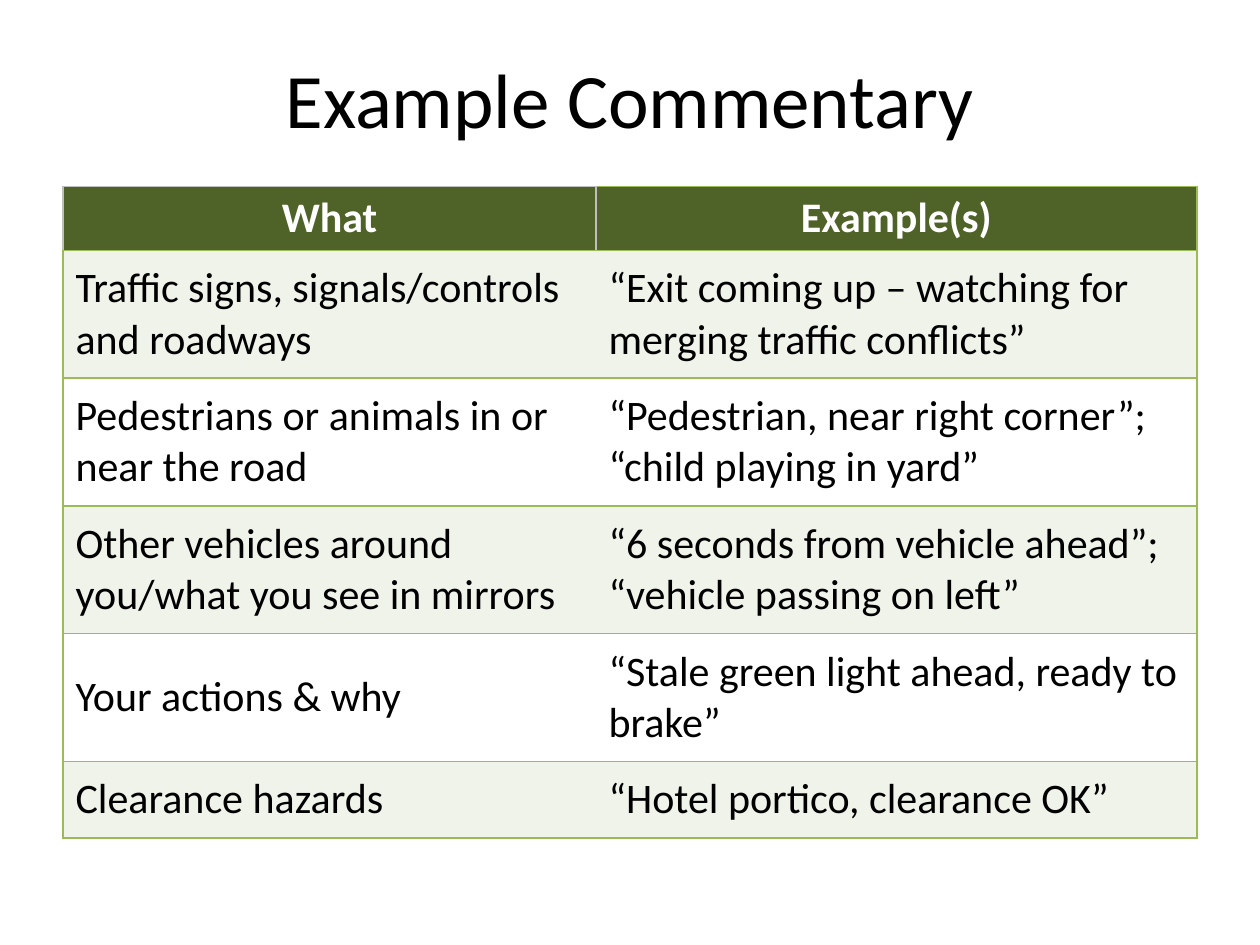
from pptx import Presentation
from pptx.dml.color import RGBColor
from pptx.enum.text import MSO_ANCHOR as Anchor, PP_ALIGN as Align
from pptx.oxml.ns import qn
from pptx.util import Inches, Pt
from lxml.etree import SubElement

GREEN, GREY, DARK = "9BBB59", "BFBFBF", "4F6228"
BANDS = ["EFF3EA", "FFFFFF"]
HEADER = ["What", "Example(s)"]
ROWS = [
    ("Traffic signs, signals/controls and roadways",
     "“Exit coming up – watching for merging traffic conflicts”"),
    ("Pedestrians or animals in or near the road",
     "“Pedestrian, near right corner”;\n“child playing in yard”"),
    ("Other vehicles around you/what you see in mirrors",
     "“6 seconds from vehicle ahead”;\n“vehicle passing on left”"),
    ("Your actions & why", "“Stale green light ahead, ready to brake”"),
    ("Clearance hazards", "“Hotel portico, clearance OK”"),
]
COL_WIDTHS = [4.23, 4.77]
ROW_HEIGHTS = [0.5, 1.01, 1.01, 1.01, 1.01, 0.6]


def rgb(color):
    """Turn a hex string into a colour."""
    return RGBColor.from_string(color)


def write(tf, text, size, color, align, bold=False):
    """Fill a text frame with one paragraph per line of text."""
    for i, line in enumerate(text.split("\n")):
        p = tf.add_paragraph() if i else tf.paragraphs[0]
        p.alignment = align
        r = p.add_run()
        r.text = line
        r.font.name, r.font.size, r.font.bold = "Calibri", Pt(size), bold
        r.font.color.rgb = rgb(color)


def set_borders(cell, colors):
    """Draw the left, right, top and bottom borders; None means no line."""
    tc_pr = cell._tc.get_or_add_tcPr()
    for side, color in zip("LRTB", colors):
        ln = SubElement(tc_pr, qn(f"a:ln{side}"), w=str(Pt(1)))
        if color:
            SubElement(SubElement(ln, qn("a:solidFill")), qn("a:srgbClr"), val=color)
        else:
            SubElement(ln, qn("a:noFill"))


def fill_cell(cell, fill, borders):
    """Set the background and borders of a cell."""
    set_borders(cell, borders)
    cell.fill.solid()
    cell.fill.fore_color.rgb = rgb(fill)


def add_title(s, text):
    """Place and write the slide title."""
    sp = s.shapes.title
    sp.left, sp.top, sp.width, sp.height = map(Inches, (0.5, 0.15, 9, 1.25))
    sp.text_frame.vertical_anchor = Anchor.MIDDLE
    write(sp.text_frame, text, 44, "000000", Align.CENTER)


def add_commentary_table(s):
    """Add the table of things to watch for and example comments."""
    table = s.shapes.add_table(len(ROWS) + 1, len(HEADER), Inches(0.5), Inches(1.48),
                               Inches(9), Inches(sum(ROW_HEIGHTS))).table
    for col, width in zip(table.columns, COL_WIDTHS):
        col.width = Inches(width)
    for row, height in zip(table.rows, ROW_HEIGHTS):
        row.height = Inches(height)
    header_borders = [(GREY,) * 4, (GREY, GREEN, GREEN, GREEN)]
    for c, text in enumerate(HEADER):
        cell = table.cell(0, c)
        write(cell.text_frame, text, 24, "FFFFFF", Align.CENTER, bold=True)
        fill_cell(cell, DARK, header_borders[c])
    body_borders = [(GREEN, None, GREEN, GREEN), (None, GREEN, GREEN, GREEN)]
    for i, row in enumerate(ROWS):
        for c, text in enumerate(row):
            cell = table.cell(i + 1, c)
            cell.vertical_anchor = Anchor.MIDDLE
            cell.margin_left = cell.margin_right = Inches(0.1)
            cell.margin_top = cell.margin_bottom = Inches(0.1)
            write(cell.text_frame, text, 24, "000000", Align.LEFT)
            fill_cell(cell, BANDS[i % 2], body_borders[c])


def main():
    """Build and save the slide."""
    prs = Presentation()
    prs.slide_width, prs.slide_height = Inches(10), Inches(7.5)
    s = prs.slides.add_slide(prs.slide_layouts[5])
    add_title(s, "Example Commentary")
    add_commentary_table(s)
    prs.save("out.pptx")


if __name__ == "__main__":
    main()
